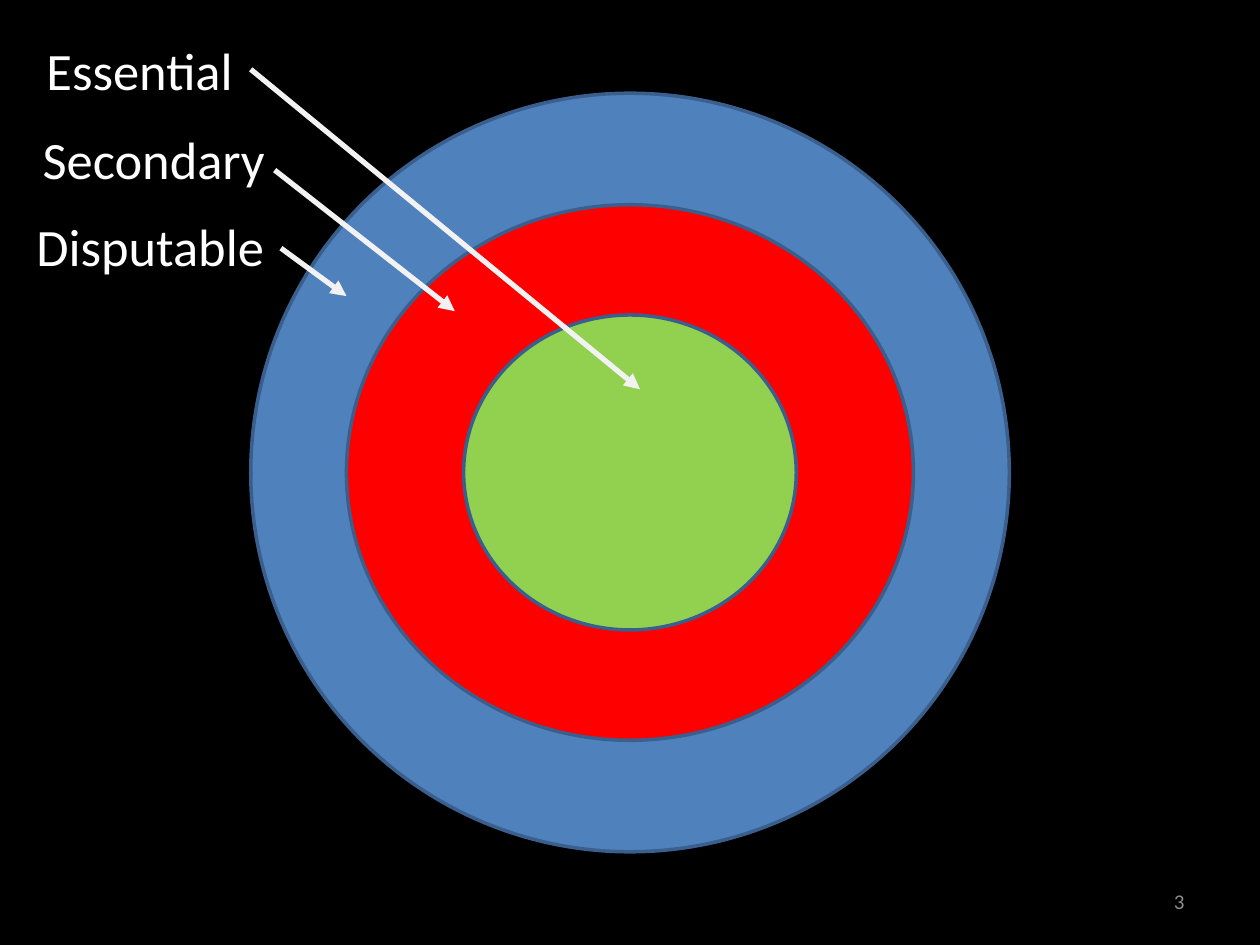
from dataclasses import dataclass

from lxml import etree
from pptx import Presentation
from pptx.dml.color import RGBColor
from pptx.enum.shapes import MSO_CONNECTOR, MSO_SHAPE
from pptx.enum.text import MSO_ANCHOR, MSO_AUTO_SIZE, PP_ALIGN
from pptx.oxml.ns import qn
from pptx.util import Inches, Pt

OVAL = MSO_SHAPE.OVAL
STRAIGHT = MSO_CONNECTOR.STRAIGHT
TOP, MIDDLE = MSO_ANCHOR.TOP, MSO_ANCHOR.MIDDLE
LEFT, RIGHT = PP_ALIGN.LEFT, PP_ALIGN.RIGHT
FIT_SHAPE = MSO_AUTO_SIZE.SHAPE_TO_FIT_TEXT
NO_FIT = MSO_AUTO_SIZE.NONE


@dataclass(frozen=True)
class Theme:
    font: str = "Calibri"
    background: str = "000000"
    disputable: str = "4F81BD"
    secondary: str = "FF0000"
    essential: str = "92D050"
    outline: str = "3A5F8C"
    arrow: str = "F2F2F2"
    label: str = "FFFFFF"
    page_number: str = "8C8C8C"
    label_size: int = 30
    page_number_size: int = 12
    outline_width: int = 2
    arrow_width: int = 3


class SlideBuilder:
    def __init__(self, slide, theme):
        self.slide = slide
        self.theme = theme
        fill = slide.background.fill
        fill.solid()
        fill.fore_color.rgb = RGBColor.from_string(theme.background)

    def ring(self, center, width, height, color):
        x, y = center
        oval = self.slide.shapes.add_shape(
            OVAL, Inches(x - width / 2), Inches(y - height / 2),
            Inches(width), Inches(height))
        oval.shadow.inherit = False
        oval.fill.solid()
        oval.fill.fore_color.rgb = RGBColor.from_string(color)
        oval.line.color.rgb = RGBColor.from_string(self.theme.outline)
        oval.line.width = Pt(self.theme.outline_width)

    def arrow(self, start, end):
        connector = self.slide.shapes.add_connector(
            STRAIGHT, *(Inches(value) for value in (*start, *end)))
        line = connector.line
        line.color.rgb = RGBColor.from_string(self.theme.arrow)
        line.width = Pt(self.theme.arrow_width)
        etree.SubElement(line._get_or_add_ln(), qn("a:tailEnd"), type="triangle")
        etree.SubElement(connector._element.spPr, qn("a:effectLst"))

    def text(self, words, box, size, color, align=LEFT, anchor=TOP, fit=FIT_SHAPE):
        frame = self.slide.shapes.add_textbox(
            *(Inches(value) for value in box)).text_frame
        frame.word_wrap = True
        frame.auto_size = fit
        frame.vertical_anchor = anchor
        paragraph = frame.paragraphs[0]
        paragraph.alignment = align
        run = paragraph.add_run()
        run.text = words
        run.font.name = self.theme.font
        run.font.size = Pt(size)
        run.font.color.rgb = RGBColor.from_string(color)


def main():
    theme = Theme()
    deck = Presentation()
    deck.slide_width, deck.slide_height = Inches(10), Inches(7.5)
    builder = SlideBuilder(deck.slides.add_slide(deck.slide_layouts[6]), theme)

    # Page number
    builder.text("3", (7.17, 6.95, 2.33, 0.4), theme.page_number_size,
                 theme.page_number, RIGHT, MIDDLE, NO_FIT)

    # Concentric rings, outermost first
    center = (5, 3.75)
    rings = [
        (6.02, 6.02, theme.disputable),
        (4.5, 4.25, theme.secondary),
        (2.64, 2.5, theme.essential),
    ]
    for width, height, color in rings:
        builder.ring(center, width, height, color)

    # Arrows from each label to its ring
    levels = [
        ("Essential", (0.27, 0.25, 1.82, 0.61), (1.99, 0.55), (5.08, 3.09)),
        ("Secondary", (0.24, 0.96, 2.17, 0.61), (2.18, 1.35), (3.61, 2.47)),
        ("Disputable", (0.19, 1.65, 2.16, 0.61), (2.23, 1.97), (2.75, 2.35)),
    ]
    for _, _, start, end in levels:
        builder.arrow(start, end)

    # Labels
    for name, box, _, _ in levels:
        builder.text(name, box, theme.label_size, theme.label)

    deck.save("out.pptx")


if __name__ == "__main__":
    main()
